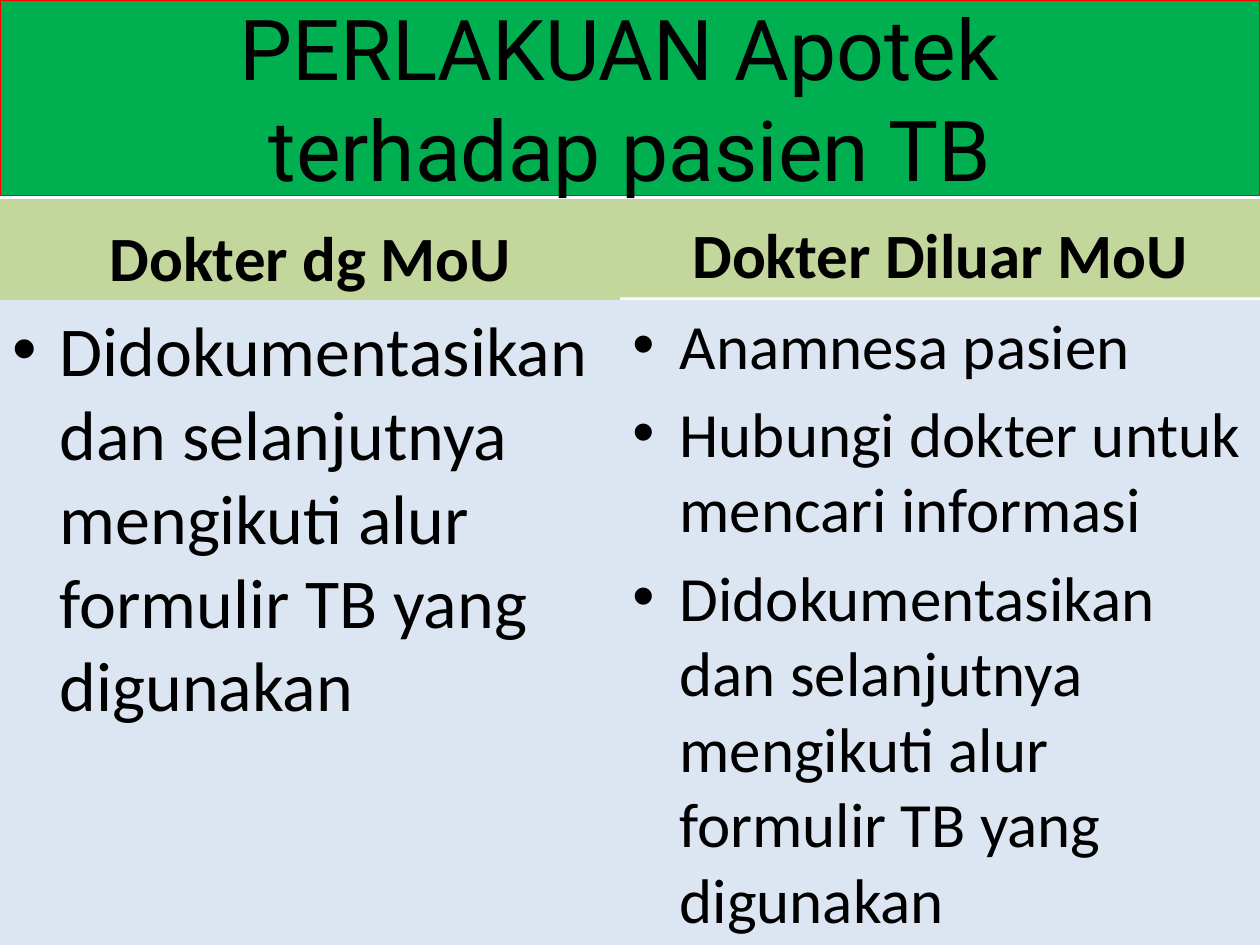
from dataclasses import dataclass

from lxml.etree import SubElement
from pptx import Presentation
from pptx.dml.color import RGBColor
from pptx.enum.shapes import MSO_SHAPE as Shape
from pptx.enum.text import MSO_ANCHOR as Anchor, PP_ALIGN as Align
from pptx.oxml.ns import qn
from pptx.slide import Slide
from pptx.util import Pt

WIDTH, HEIGHT = 720, 540
TITLE_HEIGHT = 111.6
HEADING_TOP = 113.76
BODY_TOP = 171.36
SPLIT = 354.24


def color(hex_string):
    return RGBColor.from_string(hex_string)


@dataclass
class SlideBuilder:
    slide: Slide
    text_color: str = "000000"
    title_font: str = "Roboto"
    body_font: str = "Calibri"
    title_fill: str = "00B050"
    title_line: str = "FF0000"
    heading_fill: str = "C3D69B"
    body_fill: str = "DCE6F2"
    indent: float = 27

    def panel(self, left, top, width, height, fill, anchor):
        """Add a filled rectangle and return it with its text frame."""
        shape = self.slide.shapes.add_shape(
            Shape.RECTANGLE, Pt(left), Pt(top), Pt(width), Pt(height))
        shape.shadow.inherit = False
        shape.fill.solid()
        shape.fill.fore_color.rgb = color(fill)
        shape.line.fill.background()
        frame = shape.text_frame
        frame.word_wrap = True
        frame.vertical_anchor = anchor
        return shape, frame

    def run(self, paragraph, text, font_name, size, bold=False):
        run = paragraph.add_run()
        run.text = text
        run.font.name = font_name
        run.font.size = Pt(size)
        run.font.bold = bold
        run.font.color.rgb = color(self.text_color)

    def title(self, lines):
        shape, frame = self.panel(0, 0, WIDTH, TITLE_HEIGHT, self.title_fill, Anchor.MIDDLE)
        shape.line.color.rgb = color(self.title_line)
        shape.line.width = Pt(0.75)
        paragraph = frame.paragraphs[0]
        paragraph.alignment = Align.CENTER
        for index, line in enumerate(lines):
            if index:
                paragraph.add_line_break()
            self.run(paragraph, line, self.title_font, 48)

    def heading(self, left, width, height, text):
        _, frame = self.panel(left, HEADING_TOP, width, height, self.heading_fill, Anchor.BOTTOM)
        paragraph = frame.paragraphs[0]
        paragraph.alignment = Align.CENTER
        self.run(paragraph, text, self.body_font, 36, bold=True)

    def bullets(self, left, width, items, size):
        _, frame = self.panel(left, BODY_TOP, width, HEIGHT - BODY_TOP, self.body_fill, Anchor.TOP)
        for index, item in enumerate(items):
            paragraph = frame.add_paragraph() if index else frame.paragraphs[0]
            paragraph.alignment = Align.LEFT
            if index:
                paragraph.space_before = Pt(0.2 * size)
            self.bullet(paragraph)
            self.run(paragraph, item, self.body_font, size)

    def bullet(self, paragraph):
        """Give the paragraph a round bullet and a hanging indent."""
        properties = paragraph._p.get_or_add_pPr()
        properties.set("marL", str(Pt(self.indent)))
        properties.set("indent", str(-Pt(self.indent)))
        SubElement(properties, qn("a:buFont")).set("typeface", "Arial")
        SubElement(properties, qn("a:buChar")).set("char", "•")


def main():
    presentation = Presentation()
    presentation.slide_width, presentation.slide_height = Pt(WIDTH), Pt(HEIGHT)
    builder = SlideBuilder(presentation.slides.add_slide(presentation.slide_layouts[6]))

    documentation = "Didokumentasikan dan selanjutnya mengikuti alur formulir TB yang digunakan"
    columns = [
        (0, SPLIT, 57.6, "Dokter dg MoU", [documentation], 40),
        (SPLIT, WIDTH - SPLIT, 56.16, "Dokter Diluar MoU",
         ["Anamnesa pasien", "Hubungi dokter untuk mencari informasi", documentation], 36),
    ]
    builder.title(["PERLAKUAN Apotek ", "terhadap pasien TB"])
    for left, width, heading_height, heading, items, size in columns:
        builder.heading(left, width, heading_height, heading)
        builder.bullets(left, width, items, size)

    presentation.save("out.pptx")


if __name__ == "__main__":
    main()
